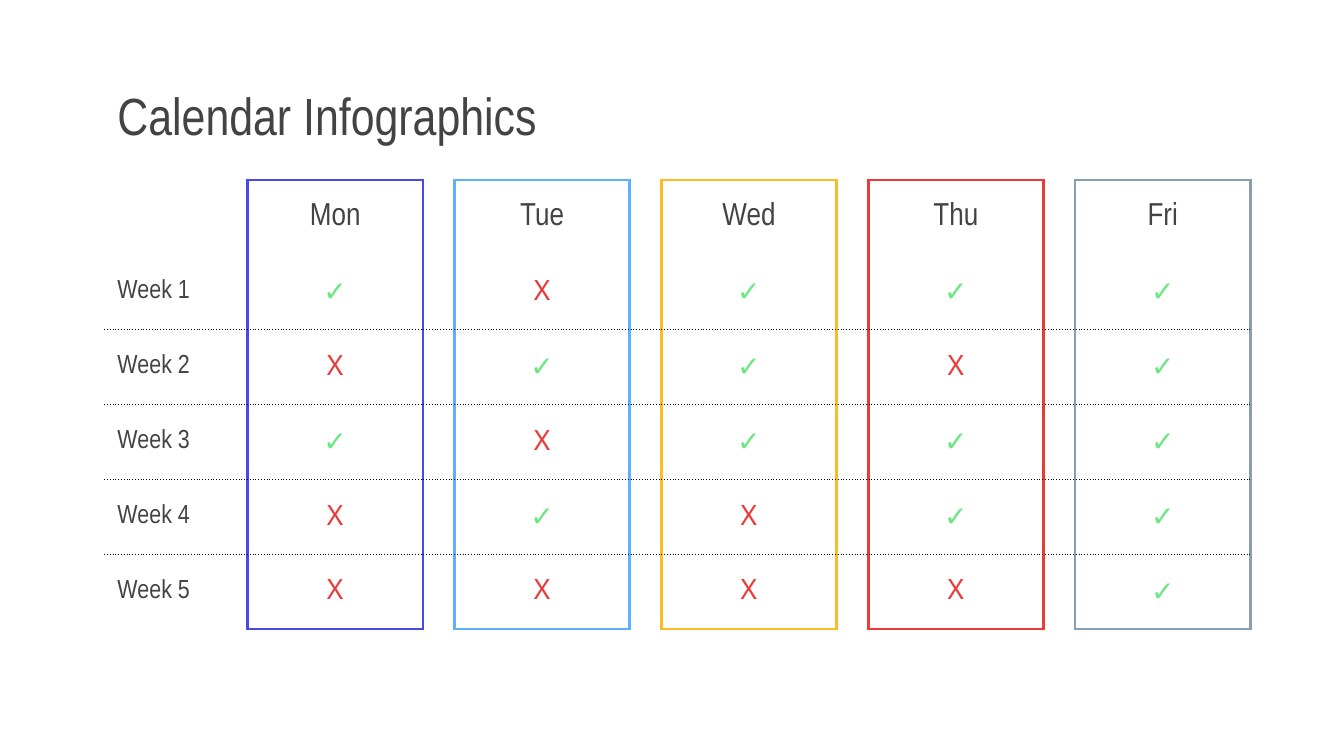
from lxml import etree
from pptx import Presentation
from pptx import util as u
from pptx.dml.color import RGBColor
from pptx.enum import text
from pptx.oxml import ns

INK = RGBColor(0x43, 0x43, 0x43)
BLACK = RGBColor(0x00, 0x00, 0x00)
GREEN = RGBColor(0x69, 0xE7, 0x81)
BLUE = RGBColor(0x49, 0x49, 0xE7)
SKY = RGBColor(0x5E, 0xB2, 0xFC)
YELLOW = RGBColor(0xFC, 0xBD, 0x24)
RED = RGBColor(0xEC, 0x3A, 0x3B)
GREY = RGBColor(0x86, 0x9F, 0xB2)

DONE, MISSED = "✓", "𐊴"
MARK_COLORS = {DONE: GREEN, MISSED: RED}
DAYS = {"Mon": BLUE, "Tue": SKY, "Wed": YELLOW, "Thu": RED, "Fri": GREY}
WEEKS = {
    "Week 1": [DONE, MISSED, DONE, DONE, DONE],
    "Week 2": [MISSED, DONE, DONE, MISSED, DONE],
    "Week 3": [DONE, MISSED, DONE, DONE, DONE],
    "Week 4": [MISSED, DONE, MISSED, DONE, DONE],
    "Week 5": [MISSED, MISSED, MISSED, MISSED, DONE],
}
LEFT, WIDTH = u.Cm(1.97), u.Cm(21.46)
LABEL_WIDTH, DAY_WIDTH, GAP_WIDTH = u.Cm(2.71), u.Cm(3.31), u.Cm(0.55)


class CalendarSlide:
    """Holds the shared style and the slide being built."""

    body_font, mark_font = "Arial Narrow", "Roboto"
    margin = u.Cm(0.25)

    def __init__(self, deck):
        self.slide = deck.slides.add_slide(deck.slide_layouts[5])

    def add_words(self, paragraph, words, size, color=INK, font=None,
                  align=text.PP_ALIGN.LEFT):
        paragraph.alignment = align
        run = paragraph.add_run()
        run.text = words
        style = {"size": u.Pt(size), "name": font or self.body_font, "bold": False}
        for name, value in style.items():
            setattr(run.font, name, value)
        run.font.color.rgb = color

    def pad(self, holder):
        for side in ("left", "right", "top", "bottom"):
            setattr(holder, f"margin_{side}", self.margin)
        holder.vertical_anchor = text.MSO_ANCHOR.MIDDLE

    def title(self, words):
        heading = self.slide.shapes.title
        place = {"left": LEFT, "top": u.Cm(1.5), "width": WIDTH, "height": u.Cm(1.34)}
        for name, value in place.items():
            setattr(heading, name, value)
        frame = heading.text_frame
        frame.auto_size = text.MSO_AUTO_SIZE.NONE
        self.pad(frame)
        self.add_words(frame.paragraphs[0], words, 28)

    def border(self, cell, side, color, points, dash):
        line = etree.SubElement(cell._tc.get_or_add_tcPr(), ns.qn(f"a:ln{side}"))
        if color is None:
            etree.SubElement(line, ns.qn("a:noFill"))
            return
        line.set("w", str(u.Pt(points)))
        fill = etree.SubElement(line, ns.qn("a:solidFill"))
        etree.SubElement(fill, ns.qn("a:srgbClr"), val=str(color))
        etree.SubElement(line, ns.qn("a:prstDash"), val=dash)

    def cell(self, cell, edges):
        self.pad(cell)
        for side, edge in edges.items():
            self.border(cell, side, *edge)
        cell.fill.background()

    def table(self, rows, columns, top, height):
        grid = self.slide.shapes.add_table(rows, columns, LEFT, top, WIDTH, height).table
        grid.first_row = grid.horz_banding = False
        return grid


def cell_edges(row, column, last_row):
    """Solid frame around each day column, dotted rules between the weeks."""
    none, dotted = (None, 0, ""), (BLACK, 0.75, "dot")
    frames = {2 * i + 1: (color, 1.5, "solid") for i, color in enumerate(DAYS.values())}
    own = frames.get(column, none)
    return {
        "L": frames.get(column, frames.get(column - 1, none)),
        "R": frames.get(column, frames.get(column + 1, none)),
        "T": own if row == 0 else dotted if row > 1 else none,
        "B": own if row == last_row else dotted if row > 0 else none,
    }


def main():
    deck = Presentation()
    deck.slide_width, deck.slide_height = u.Cm(25.4), u.Cm(14.29)
    calendar = CalendarSlide(deck)
    calendar.title("Calendar Infographics")

    # Grid: label column, then day columns separated by narrow gaps
    grid = calendar.table(len(WEEKS) + 1, 2 * len(DAYS), u.Cm(3.4), u.Cm(8.49))
    for c, column in enumerate(grid.columns):
        column.width = DAY_WIDTH if c % 2 else GAP_WIDTH if c else LABEL_WIDTH
    for r in range(len(grid.rows)):
        for c in range(len(grid.columns)):
            calendar.cell(grid.cell(r, c), cell_edges(r, c, len(WEEKS)))

    # Day names
    center = text.PP_ALIGN.CENTER
    for i, day in enumerate(DAYS):
        heading = grid.cell(0, 2 * i + 1).text_frame.paragraphs[0]
        calendar.add_words(heading, day, 17, align=center)

    # Week names and marks
    for r, (week, marks) in enumerate(WEEKS.items(), start=1):
        calendar.add_words(grid.cell(r, 0).text_frame.paragraphs[0], week, 14)
        for i, mark in enumerate(marks):
            calendar.add_words(grid.cell(r, 2 * i + 1).text_frame.paragraphs[0], mark, 15,
                               MARK_COLORS[mark], calendar.mark_font, center)

    deck.save("out.pptx")


if __name__ == "__main__":
    main()
